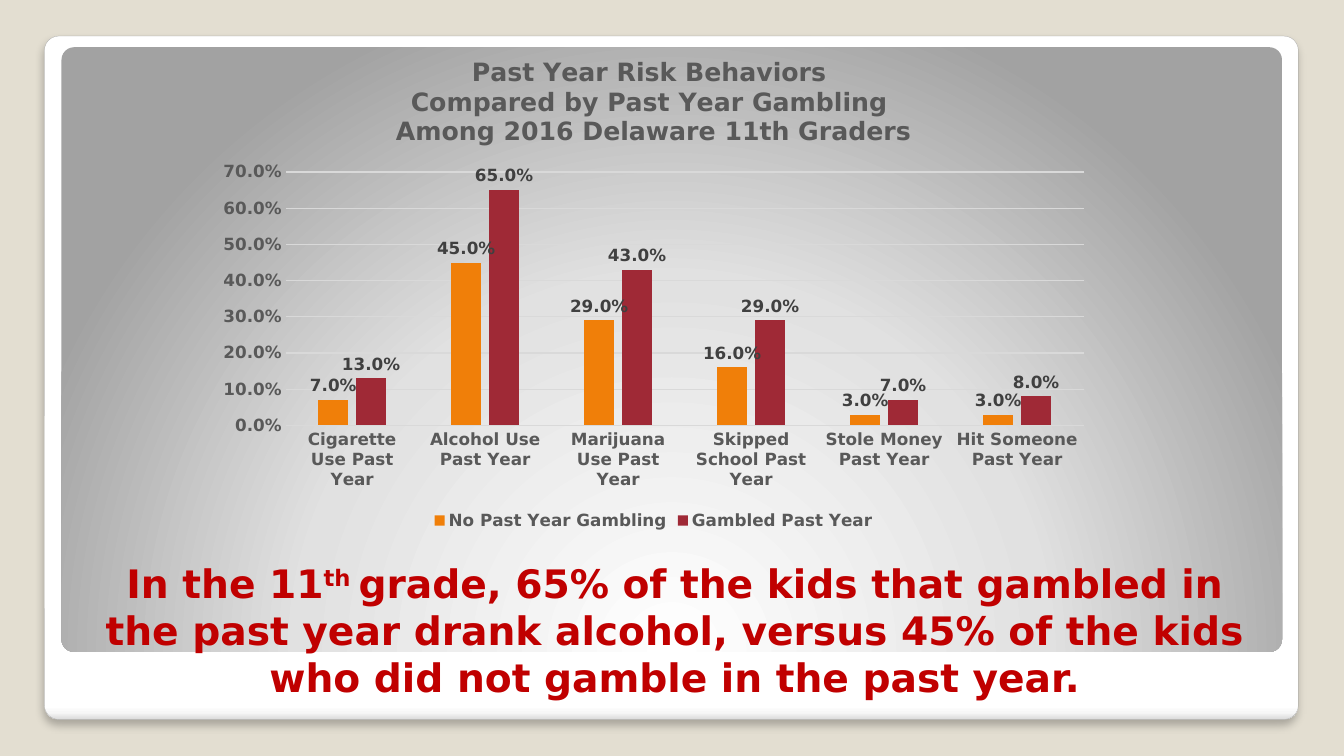
"""Build a slide that compares risk behaviors by past year gambling."""
from pptx import Presentation, oxml, util as u
from pptx.chart import data
from pptx.dml import color
from pptx.enum import chart as ch, shapes, text
from pptx.oxml import ns

HUES = {
    "back": "E3DED1", "edge": "A4A4A4", "grid": "D9D9D9", "gray": "595959",
    "dark": "404040", "red": "C00000", "gold": "F07F09", "wine": "9F2936",
}
FONT = "DejaVu Sans"
CARD = [(0, "FFFFFF"), (98, "FFFFFF"), (99, "F7F7F7"), (100, "DADADA")]
PANEL = [(0, "FFFFFF"), (55, "E1E1E1"), (100, "A2A2A2")]
DOWN = '<a:lin ang="5400000" scaled="0"/>'
GLOW = ('<a:path path="circle"><a:fillToRect l="50000" t="175000" '
        'r="50000" b="-75000"/></a:path>')
SHADE = ('<a:outerShdw blurRad="76200" dist="50800" dir="5400000" algn="t" '
         'rotWithShape="0"><a:srgbClr val="000000"><a:alpha val="25000"/>'
         '</a:srgbClr></a:outerShdw>')
HEAD = ["Past Year Risk Behaviors ", "Compared by Past Year Gambling ",
        "Among 2016 Delaware 11th Graders"]
CATS = ["Cigarette Use Past Year", "Alcohol Use Past Year",
        "Marijuana Use Past Year", "Skipped School Past Year",
        "Stole Money Past Year", "Hit Someone Past Year"]
ROWS = [("No Past Year Gambling", "gold", [0.07, 0.45, 0.29, 0.16, 0.03, 0.03]),
        ("Gambled Past Year", "wine", [0.13, 0.65, 0.43, 0.29, 0.07, 0.08])]
CLAIM = [("In the 11", 0), ("th ", 30),
         ("grade, 65% of the kids that gambled in the past year drank alcohol, "
          "versus 45% of the kids who did not gamble in the past year.", 0)]


def rgb(name):
    return color.RGBColor.from_string(HUES[name])


def node(tag, body):
    return oxml.parse_xml(f'<a:{tag} {ns.nsdecls("a")}>{body}</a:{tag}>')


def style(font, size, hue):
    font.name, font.size, font.bold = FONT, u.Pt(size), True
    font.color.rgb = rgb(hue)


def write(para, words, size=18, hue="gray", base=0):
    para.alignment = text.PP_ALIGN.CENTER
    run = para.add_run()
    run.text = words
    style(run.font, size, hue)
    if base:
        run.font._element.set("baseline", str(base * 1000))


class Deck:
    def __init__(self):
        self.show = Presentation()
        self.show.slide_width, self.show.slide_height = u.Cm(33.87), u.Cm(19.05)
        self.slide = self.show.slides.add_slide(self.show.slide_layouts[6])
        fill = self.slide.background.fill
        fill.solid()
        fill.fore_color.rgb = rgb("back")

    def plate(self, box, stops, path, edge=None, shade=""):
        item = self.slide.shapes.add_shape(
            shapes.MSO_SHAPE.ROUNDED_RECTANGLE, *map(u.Cm, box))
        item.adjustments[0] = 0.021
        if edge:
            item.line.color.rgb = rgb(edge)
            item.line.width = u.Pt(0.16)
        else:
            item.line.fill.background()
        marks = "".join(f'<a:gs pos="{pos * 1000}"><a:srgbClr val="{hue}"/></a:gs>'
                        for pos, hue in stops)
        props = item._element.spPr
        props.find(ns.qn("a:prstGeom")).addnext(
            node("gradFill", f"<a:gsLst>{marks}</a:gsLst>{path}"))
        props.append(node("effectLst", shade))

    def bars(self, box, head, cats, rows):
        table = data.CategoryChartData(number_format="0.0%")
        table.categories = cats
        for name, _, vals in rows:
            table.add_series(name, vals)
        chart = self.slide.shapes.add_chart(
            ch.XL_CHART_TYPE.COLUMN_CLUSTERED, *map(u.Cm, box), table).chart
        style(chart.font, 12, "gray")
        chart.has_title = True
        frame = chart.chart_title.text_frame
        for i, line in enumerate(head):
            write(frame.add_paragraph() if i else frame.paragraphs[0], line)
        chart.chart_title.include_in_layout = False
        chart.has_legend = True
        chart.legend.position = ch.XL_LEGEND_POSITION.BOTTOM
        chart.legend.include_in_layout = False
        style(chart.legend.font, 12, "gray")
        self.axes(chart.category_axis, chart.value_axis)
        plot = chart.plots[0]
        plot.gap_width, plot.overlap = 219, -27
        plot.vary_by_categories = False
        for row, (_, hue, _) in zip(plot.series, rows):
            row.format.fill.solid()
            row.format.fill.fore_color.rgb = rgb(hue)
            tags = row.data_labels
            tags.show_value = True
            tags.number_format, tags.number_format_is_linked = "0.0%", False
            tags.position = ch.XL_LABEL_POSITION.OUTSIDE_END
            style(tags.font, 12, "dark")

    def axes(self, flat, tall):
        for axis in flat, tall:
            axis.major_tick_mark = axis.minor_tick_mark = ch.XL_TICK_MARK.NONE
            style(axis.tick_labels.font, 12, "gray")
        tall.minimum_scale, tall.maximum_scale, tall.major_unit = 0, 0.7, 0.1
        tall.tick_labels.number_format = "0.0%"
        tall.tick_labels.number_format_is_linked = False
        tall.format.line.fill.background()
        for line in flat.format.line, tall.major_gridlines.format.line:
            line.color.rgb = rgb("grid")
            line.width = u.Pt(0.75)

    def claim(self, box, parts):
        frame = self.slide.shapes.add_textbox(*map(u.Cm, box)).text_frame
        frame.word_wrap = True
        frame.vertical_anchor = text.MSO_ANCHOR.BOTTOM
        for words, base in parts:
            write(frame.paragraphs[0], words, size=28, hue="red", base=base)


def main():
    deck = Deck()
    deck.plate((1.12, 0.91, 31.6, 17.22), CARD, DOWN, edge="edge", shade=SHADE)
    deck.plate((1.55, 1.19, 30.76, 15.24), PANEL, GLOW)
    deck.bars((5.18, 0.97, 22.58, 12.5), HEAD, CATS, ROWS)
    deck.claim((1.85, 14.53, 30.3, 3.25), CLAIM)
    deck.show.save("out.pptx")


if __name__ == "__main__":
    main()
